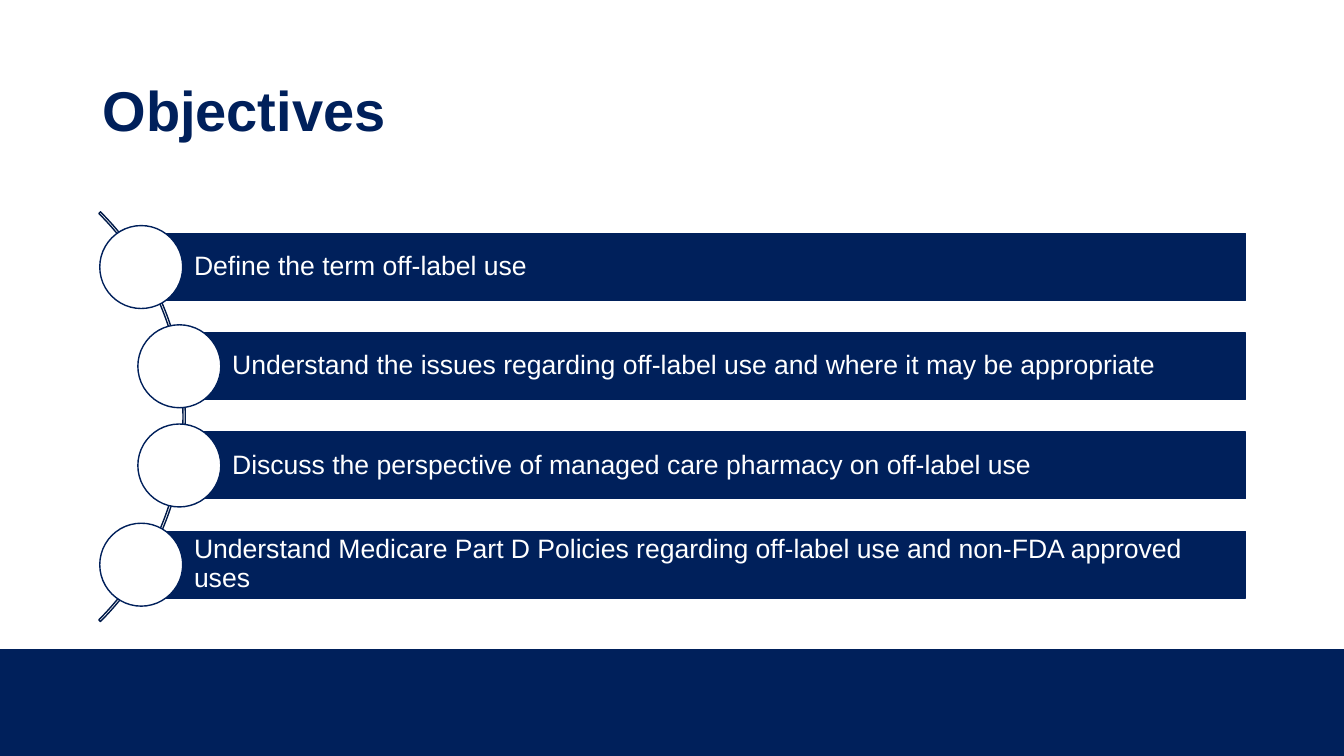
from pptx import Presentation
from pptx.dml.color import RGBColor
from pptx.enum.shapes import MSO_SHAPE
from pptx.enum.text import MSO_ANCHOR, MSO_AUTO_SIZE, PP_ALIGN
from pptx.util import Cm, Pt

COLOURS = {"navy": "00205B", "arc": "001A49", "white": "FFFFFF"}
OBJECTIVES = [
    (3.56, "Define the term off-label use"),
    (4.52, "Understand the issues regarding off-label use and where it may be appropriate"),
    (4.52, "Discuss the perspective of managed care pharmacy on off-label use"),
    (3.56, "Understand Medicare Part D Policies regarding off-label use and non-FDA approved uses"),
]
FIRST_CENTRE, PITCH = 6.73, 2.5
BAR_RIGHT, BAR_HEIGHT = 31.39, 1.68
CIRCLE_SIZE = 2.09
ARC_SIZE = 14.6


def add_figure(preset, left, top, width, height, fill, line):
    figure = slide.shapes.add_shape(preset, Cm(left), Cm(top), Cm(width), Cm(height))
    figure.shadow.inherit = False
    if fill:
        figure.fill.solid()
        figure.fill.fore_color.rgb = RGBColor.from_string(COLOURS[fill])
    else:
        figure.fill.background()
    if line:
        figure.line.color.rgb = RGBColor.from_string(COLOURS[line])
        figure.line.width = Pt(1)
    else:
        figure.line.fill.background()
    return figure


def write(frame, words, size, colour, bold):
    frame.word_wrap = True
    frame.auto_size = MSO_AUTO_SIZE.NONE
    frame.vertical_anchor = MSO_ANCHOR.MIDDLE
    paragraph = frame.paragraphs[0]
    paragraph.alignment = PP_ALIGN.LEFT
    paragraph.line_spacing = 0.9
    run = paragraph.add_run()
    run.text = words
    run.font.name = "Arial"
    run.font.size = Pt(size)
    run.font.bold = bold
    run.font.color.rgb = RGBColor.from_string(COLOURS[colour])


prs = Presentation()
prs.slide_width = Cm(33.87)
prs.slide_height = Cm(19.05)
slide = prs.slides.add_slide(prs.slide_layouts[5])

heading = slide.shapes.title
heading.left, heading.top = Cm(2.33), Cm(1.01)
heading.width, heading.height = Cm(29.21), Cm(3.68)
write(heading.text_frame, "Objectives", 40, "navy", True)

add_figure(MSO_SHAPE.RECTANGLE, 0, 16.36, 33.87, 2.69, "navy", None)

arc = add_figure(MSO_SHAPE.BLOCK_ARC, -9.93, 3.2, ARC_SIZE, ARC_SIZE, None, "arc")
arc.adjustments[0] = 189
arc.adjustments[1] = 27
arc.adjustments[2] = 0.004

for index, (bar_left, objective) in enumerate(OBJECTIVES):
    centre = FIRST_CENTRE + index * PITCH
    bar = add_figure(MSO_SHAPE.RECTANGLE, bar_left, centre - BAR_HEIGHT / 2,
                     BAR_RIGHT - bar_left, BAR_HEIGHT, "navy", "navy")
    bar.text_frame.margin_left = Cm(1.33)
    bar.text_frame.margin_right = Cm(0.13)
    bar.text_frame.margin_top = bar.text_frame.margin_bottom = Cm(0.13)
    write(bar.text_frame, objective, 19, "white", False)
    add_figure(MSO_SHAPE.OVAL, bar_left - CIRCLE_SIZE / 2, centre - CIRCLE_SIZE / 2,
               CIRCLE_SIZE, CIRCLE_SIZE, "white", "navy")

prs.save("out.pptx")
